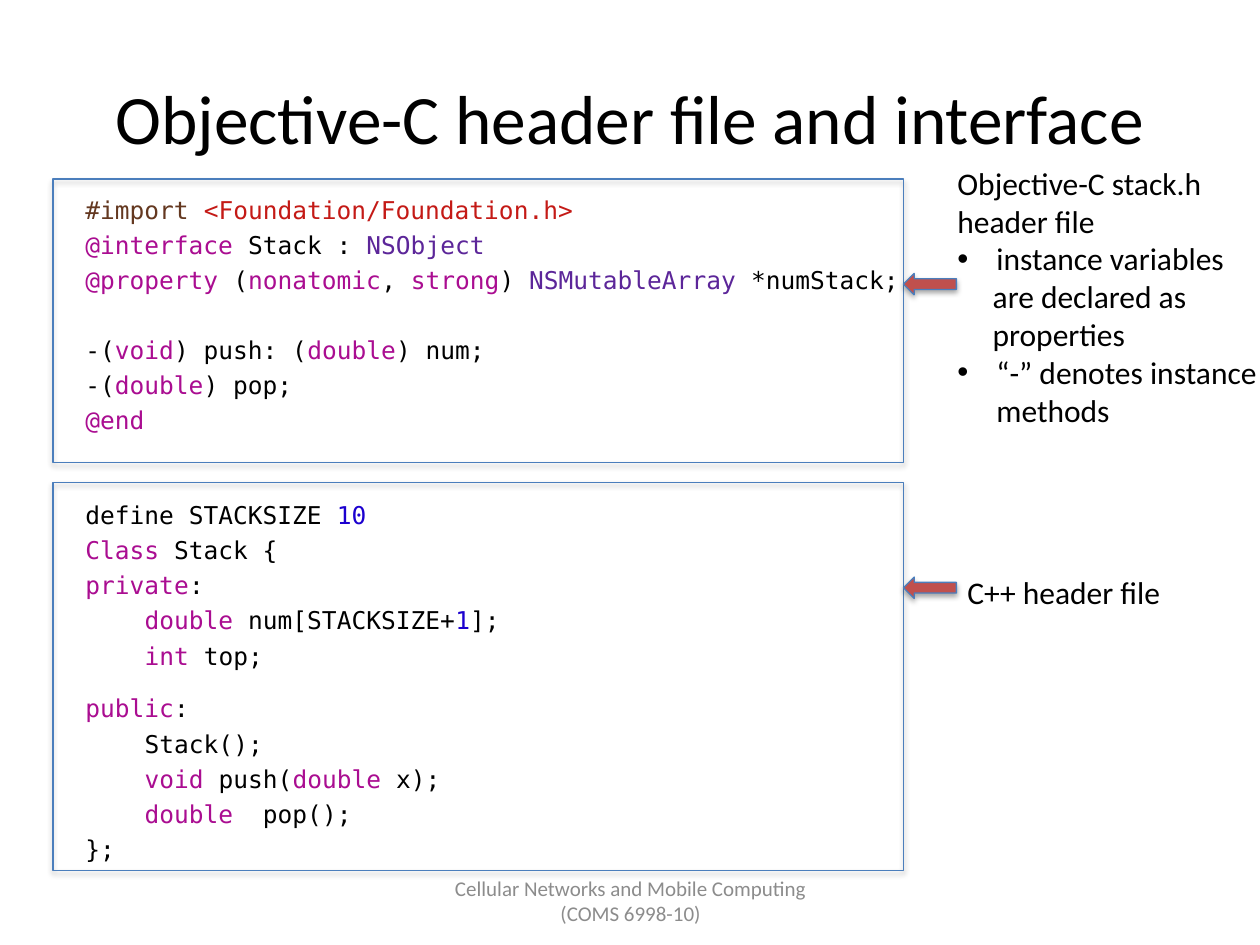
from lxml.etree import SubElement
from pptx import Presentation
from pptx.dml.color import RGBColor
from pptx.enum.shapes import MSO_SHAPE as Shape
from pptx.enum.text import MSO_ANCHOR as Anchor, PP_ALIGN as Align
from pptx.oxml.ns import qn
from pptx.util import Inches, Pt

BLACK = RGBColor(0x00, 0x00, 0x00)
GRAY = RGBColor(0x8C, 0x8C, 0x8C)
BROWN = RGBColor(0x64, 0x38, 0x20)
CRIMSON = RGBColor(0xC4, 0x1A, 0x16)
PINK = RGBColor(0xAA, 0x0D, 0x91)
PURPLE = RGBColor(0x5C, 0x26, 0x99)
NAVY = RGBColor(0x1C, 0x00, 0xCF)
BLUE = RGBColor(0x4B, 0x7E, 0xBC)
RED = RGBColor(0xC0, 0x50, 0x4D)

SANS, MONO = "Calibri", "DejaVu Sans Mono"
TAB = 0.47
STEP = 3.27

WORDS = {
    BROWN: ["#import"],
    CRIMSON: ["<Foundation/Foundation.h>"],
    PINK: ["@interface", "@property", "@end", "nonatomic", "strong", "void",
           "double", "int", "Class", "private", "public"],
    PURPLE: ["NSObject", "NSMutableArray"],
    NAVY: ["10", "1"],
}
HUES = {word: hue for hue, words in WORDS.items() for word in words}

OBJC = [
    (STEP, 0, ["#import ", "<Foundation/Foundation.h>"]),
    (STEP, 0, ["@interface", " Stack : ", "NSObject"]),
    (STEP, 0, ["@property", " (", "nonatomic", ", ", "strong", ") ",
               "NSMutableArray", " *numStack;"]),
    (22.85, 0, ["-(", "void", ") push: (", "double", ") num;"]),
    (STEP, 0, ["-(", "double", ") pop;"]),
    (STEP, 0, ["@end"]),
]
CPP = [
    (STEP, 0, ["define STACKSIZE ", "10"]),
    (STEP, 0, ["Class", " Stack {"]),
    (STEP, 0, ["private", ":"]),
    (STEP, TAB, ["double ", "num[STACKSIZE+", "1", "];"]),
    (STEP, TAB, ["int", " top;"]),
    (13.4, 0, ["public", ":"]),
    (STEP, TAB, ["Stack();"]),
    (STEP, TAB, ["void", " push(", "double", " x);"]),
    (STEP, TAB, ["double", "  pop();"]),
    (STEP, 0, ["};"]),
]
NOTES = [
    ("Objective-C stack.h header file", 0, False),
    ("instance variables", 0.31, True),
    ("are declared as", 0.28, False),
    ("properties", 0.28, False),
    ("“-” denotes instance methods", 0.31, True),
]


def style(para, size, name=SANS, hue=BLACK):
    """Set the font of a paragraph."""
    font = para.font
    font.size, font.name = Pt(size), name
    font.color.rgb = hue


def indent(para, left, dot=False):
    """Indent a paragraph, with a hanging bullet if asked."""
    props = para._p.get_or_add_pPr()
    props.set("marL", str(Inches(left)))
    if dot:
        props.set("indent", str(-Inches(left)))
        SubElement(props, qn("a:buFont"), typeface="Arial")
        SubElement(props, qn("a:buChar"), char="•")


def add_text(slide, box, count=1, wrap=True):
    """Add a text box and return its frame with count paragraphs."""
    frame = slide.shapes.add_textbox(*map(Inches, box)).text_frame
    frame.word_wrap = wrap
    for _ in range(count - 1):
        frame.add_paragraph()
    return frame


def add_code(slide, box, lines):
    """Add code with its words in colour."""
    frame = add_text(slide, box, len(lines))
    for para, (gap, left, parts) in zip(frame.paragraphs, lines):
        para.space_before = Pt(gap)
        style(para, 14, MONO)
        indent(para, left)
        for part in parts:
            run = para.add_run()
            run.text = part
            run.font.color.rgb = HUES.get(part.strip(), BLACK)


def add_notes(slide, box):
    """Add the remarks on the first header file."""
    frame = add_text(slide, box, len(NOTES))
    for para, (text, left, dot) in zip(frame.paragraphs, NOTES):
        para.text = text
        style(para, 18)
        indent(para, left, dot)


def add_label(slide, box, text, size, hue=BLACK, wrap=True):
    """Add a text box of one paragraph and return its frame."""
    frame = add_text(slide, box, wrap=wrap)
    para = frame.paragraphs[0]
    para.text = text
    style(para, size, hue=hue)
    return frame


def add_shape(slide, kind, box, fill=None):
    """Add an outlined shape with a soft shadow below."""
    shape = slide.shapes.add_shape(kind, *map(Inches, box))
    if fill is None:
        shape.fill.background()
    else:
        shape.fill.solid()
        shape.fill.fore_color.rgb = fill
    shape.line.color.rgb = BLUE
    shape.line.width = Pt(0.75)
    shape.shadow.inherit = False
    effects = shape._element.spPr.find(qn("a:effectLst"))
    shade = SubElement(effects, qn("a:outerShdw"), blurRad=str(Pt(3.1)),
                       dist=str(Pt(1.8)), dir="5400000", rotWithShape="0")
    tone = SubElement(shade, qn("a:srgbClr"), val="000000")
    SubElement(tone, qn("a:alpha"), val="35000")


def add_title(slide, text):
    """Place and fill the title."""
    title = slide.shapes.title
    title.left, title.top = Inches(0.5), Inches(0.3)
    title.width, title.height = Inches(9), Inches(1.25)
    frame = title.text_frame
    frame.text = text
    frame.vertical_anchor = Anchor.MIDDLE
    para = frame.paragraphs[0]
    para.alignment = Align.CENTER
    style(para, 39.6)


def main():
    """Build the slide and save it."""
    deck = Presentation()
    deck.slide_width, deck.slide_height = Inches(10), Inches(7.5)
    slide = deck.slides.add_slide(deck.slide_layouts[5])
    add_title(slide, "Objective-C header file and interface")
    add_code(slide, (0.58, 1.5, 7.5, 2.25), OBJC)
    foot = add_label(slide, (3.42, 6.95, 3.17, 0.4),
                     "Cellular Networks and Mobile Computing (COMS 6998-10)",
                     12, GRAY)
    foot.vertical_anchor = Anchor.MIDDLE
    foot.paragraphs[0].alignment = Align.CENTER
    add_code(slide, (0.58, 3.92, 6.58, 3.17), CPP)
    for top, height in ((1.42, 2.25), (3.83, 3.08)):
        add_shape(slide, Shape.RECTANGLE, (0.42, top, 6.75, height))
    for top in (2.17, 4.58):
        add_shape(slide, Shape.LEFT_ARROW, (7.17, top, 0.42, 0.17), RED)
    add_notes(slide, (7.5, 1.25, 2.75, 2.22))
    add_label(slide, (7.58, 4.5, 1.74, 0.4), "C++ header file", 18, wrap=False)
    deck.save("out.pptx")


if __name__ == "__main__":
    main()
